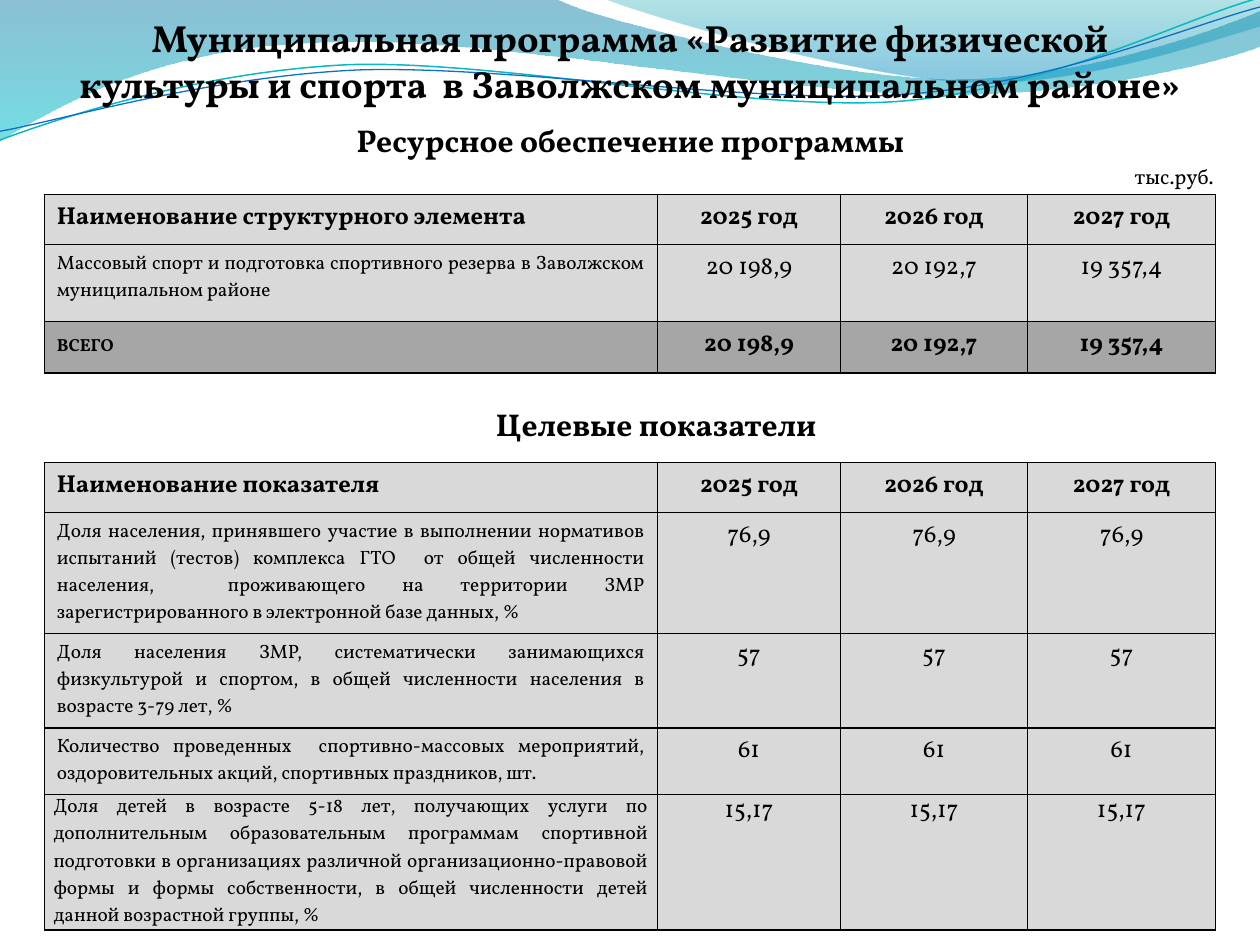
from lxml import etree
from pptx import Presentation
from pptx.dml.color import RGBColor
from pptx.enum.text import MSO_ANCHOR, MSO_AUTO_SIZE, PP_ALIGN
from pptx.oxml.ns import qn
from pptx.util import Pt

LEFT, CENTER, RIGHT, JUSTIFY = PP_ALIGN.LEFT, PP_ALIGN.CENTER, PP_ALIGN.RIGHT, PP_ALIGN.JUSTIFY
TOP, MIDDLE, BOTTOM = MSO_ANCHOR.TOP, MSO_ANCHOR.MIDDLE, MSO_ANCHOR.BOTTOM
NO_FIT = MSO_AUTO_SIZE.NONE

FONT = "Vollkorn"
BLACK = RGBColor(0x00, 0x00, 0x00)
LIGHT_GRAY = RGBColor(0xD9, 0xD9, 0xD9)
DARK_GRAY = RGBColor(0xA6, 0xA6, 0xA6)
DEEP_BLUE = RGBColor(0x00, 0x74, 0xA1)
CYAN = RGBColor(0x00, 0xC6, 0xCF)
TEAL = RGBColor(0x00, 0xA1, 0xA9)
SKY_BLUE = RGBColor(0x00, 0x8B, 0xBF)
LINE_TEAL = RGBColor(0x0A, 0xB8, 0xBF)
LINE_BLUE = RGBColor(0x0F, 0x6F, 0xC6)

# Wave outlines in points: a start, then lines (x, y) or Bezier curves (six numbers)
WIDE_WAVE = [(0, 0), (317, -1), (343, 12, 478, 45, 546, 45), (614, 45, 690, 19, 720, 6),
             (721, 26), (708, 32, 626, 55, 537, 54), (448, 54, 275, 20, 185, 24),
             (93, 26, 33, 60, -1, 81)]
RIGHT_WAVE = [(345, -1), (366, 8, 491, 45, 554, 47), (616, 50, 692, 23, 720, 15), (720, 0)]
TEAL_CURVE = [(0, 80), (35, 67, 114, 41, 199, 37), (284, 34, 427, 64, 513, 58),
              (600, 51, 675, 11, 719, -1)]
BLUE_CURVE = [(0, 75), (34, 69, 118, 44, 204, 40), (290, 37, 430, 60, 516, 54),
              (602, 48, 678, 15, 720, 4)]

TABLE_LEFT = 25.3
COLUMN_WIDTHS = [350.5, 104.5, 107, 107.3]
YEARS = ["2025 год", "2026 год", "2027 год"]
AMOUNTS = ["20 198,9", "20 192,7", "19 357,4"]
RESOURCES = [
    ["Наименование структурного элемента", *YEARS],
    ["Массовый спорт и подготовка спортивного резерва в Заволжском муниципальном районе", *AMOUNTS],
    ["ВСЕГО", *AMOUNTS],
]
INDICATORS = [
    ["Наименование показателя", *YEARS],
    ["Доля населения, принявшего участие в выполнении нормативов испытаний (тестов) комплекса "
     "ГТО  от общей численности населения,  проживающего на территории ЗМР зарегистрированного "
     "в электронной базе данных, %"] + ["76,9"] * 3,
    ["Доля населения ЗМР, систематически занимающихся физкультурой и спортом, в общей "
     "численности населения в возрасте 3-79 лет, %"] + ["57"] * 3,
    ["Количество проведенных  спортивно-массовых мероприятий, оздоровительных акций, "
     "спортивных праздников, шт."] + ["61"] * 3,
    ["Доля детей в возрасте 5-18 лет, получающих услуги по дополнительным образовательным "
     "программам спортивной подготовки в организациях различной организационно-правовой формы "
     "и формы собственности, в общей численности детей данной возрастной группы, %"]
    + ["15,17"] * 3,
]


def format_paragraph(paragraph, size, bold, alignment):
    paragraph.alignment = alignment
    font = paragraph.font
    font.name, font.size, font.bold = FONT, Pt(size), bold
    font.color.rgb = BLACK


def add_outline(slide, outline, close):
    """Freeform whose six-number segments become cubic Bezier curves."""
    points = [(Pt(segment[i]), Pt(segment[i + 1]))
              for segment in outline for i in range(0, len(segment), 2)]
    builder = slide.shapes.build_freeform(*points[0])
    builder.add_line_segments(points[1:], close=close)
    shape = builder.convert_to_shape()
    shape.shadow.inherit = False
    lines = iter(list(shape._element.spPr.iter(qn("a:lnTo"))))
    for segment in outline[1:]:
        first = next(lines)
        if len(segment) == 6:
            first.tag_name = None
            curve = etree.Element(qn("a:cubicBezTo"))
            first.addprevious(curve)
            for line in (first, next(lines), next(lines)):
                curve.append(line[0])
                line.getparent().remove(line)
    return shape


def add_wave(slide, outline, stops):
    """Closed wave with a downward gradient; stops are (position, colour, opacity %)."""
    shape = add_outline(slide, outline, True)
    shape.line.fill.background()
    shape.fill.gradient()
    shape.fill.gradient_angle = 270
    for stop, (position, color, _) in zip(shape.fill.gradient_stops, stops):
        stop.position, stop.color.rgb = position, color
    colors = shape._element.spPr.iter(qn("a:srgbClr"))
    for element, (_, _, opacity) in zip(list(colors), stops):
        etree.SubElement(element, qn("a:alpha"), val=str(opacity * 1000))


def add_curve(slide, outline, color, width):
    shape = add_outline(slide, outline, False)
    shape.fill.background()
    shape.line.color.rgb = color
    shape.line.width = Pt(width)


def set_title(slide, text):
    title = slide.shapes.title
    title.left, title.top, title.width, title.height = Pt(36.5), Pt(9.5), Pt(647), Pt(51)
    frame = title.text_frame
    frame.text = text
    frame.word_wrap, frame.auto_size, frame.vertical_anchor = True, NO_FIT, BOTTOM
    frame.margin_left = frame.margin_right = frame.margin_bottom = 0
    frame.margin_top = Pt(3.6)
    format_paragraph(frame.paragraphs[0], 21.6, True, CENTER)
    # Bring the title in front of the waves
    slide.shapes._spTree.append(title._element)


def add_text(slide, left, top, width, height, lines):
    """Text box; lines are (text, size, bold, alignment)."""
    frame = slide.shapes.add_textbox(Pt(left), Pt(top), Pt(width), Pt(height)).text_frame
    frame.word_wrap = True
    for index, (text, size, bold, alignment) in enumerate(lines):
        paragraph = frame.add_paragraph() if index else frame.paragraphs[0]
        paragraph.text = text
        format_paragraph(paragraph, size, bold, alignment)
        if index:
            paragraph.space_before = Pt(size * 0.2)


def set_borders(cell):
    properties = cell._tc.get_or_add_tcPr()
    for position, side in enumerate(("lnL", "lnR", "lnT", "lnB")):
        line = etree.Element(qn(f"a:{side}"), w=str(Pt(1)))
        fill = etree.SubElement(line, qn("a:solidFill"))
        etree.SubElement(fill, qn("a:srgbClr"), val=str(BLACK))
        properties.insert(position, line)


def add_data_table(slide, top, rows, heights):
    frame = slide.shapes.add_table(len(rows), len(COLUMN_WIDTHS), Pt(TABLE_LEFT), Pt(top),
                                   Pt(sum(COLUMN_WIDTHS)), Pt(sum(heights)))
    table = frame.table
    table.first_row = table.horz_banding = False
    for column, width in zip(table.columns, COLUMN_WIDTHS):
        column.width = Pt(width)
    for row_index, (values, height) in enumerate(zip(rows, heights)):
        table.rows[row_index].height = Pt(height)
        header, total = row_index == 0, values[0] == "ВСЕГО"
        for column_index, text in enumerate(values):
            cell = table.cell(row_index, column_index)
            cell.text = text
            cell.fill.solid()
            cell.fill.fore_color.rgb = DARK_GRAY if total else LIGHT_GRAY
            set_borders(cell)
            size, alignment = 14, CENTER
            if column_index == 0:
                alignment = LEFT if header or total else JUSTIFY
                size = 14 if header else 10 if total else 11
                cell.vertical_anchor = MIDDLE if total else TOP
            format_paragraph(cell.text_frame.paragraphs[0], size, header or total, alignment)
    return table


def main():
    presentation = Presentation()
    presentation.slide_width, presentation.slide_height = Pt(720), Pt(540)
    slide = presentation.slides.add_slide(presentation.slide_layouts[5])

    # Decorative waves
    add_wave(slide, WIDE_WAVE, [(0, DEEP_BLUE, 45), (1, CYAN, 55)])
    add_wave(slide, RIGHT_WAVE, [(0, TEAL, 30), (0.8, SKY_BLUE, 45)])
    add_curve(slide, TEAL_CURVE, LINE_TEAL, 0.85)
    add_curve(slide, BLUE_CURVE, LINE_BLUE, 0.75)

    # Title
    set_title(slide, "Муниципальная программа «Развитие физической культуры и спорта  "
                     "в Заволжском муниципальном районе»")

    # Resources
    add_text(slide, 20, 65.7, 680.5, 255, [("Ресурсное обеспечение программы", 18, True, CENTER),
                                           ("тыс.руб.", 12, False, RIGHT)])
    add_data_table(slide, 111.3, RESOURCES, [28.5, 44, 29.5])

    # Target indicators
    add_text(slide, 275, 227.8, 200, 29, [("Целевые показатели", 18, True, CENTER)])
    table = add_data_table(slide, 264.4, INDICATORS, [28.5, 69, 54, 38, 77.5])
    for cell in table.rows[len(INDICATORS) - 1].cells:
        cell.margin_left = cell.margin_right = Pt(5.3)
        cell.margin_top = cell.margin_bottom = 0

    presentation.save("out.pptx")


if __name__ == "__main__":
    main()
